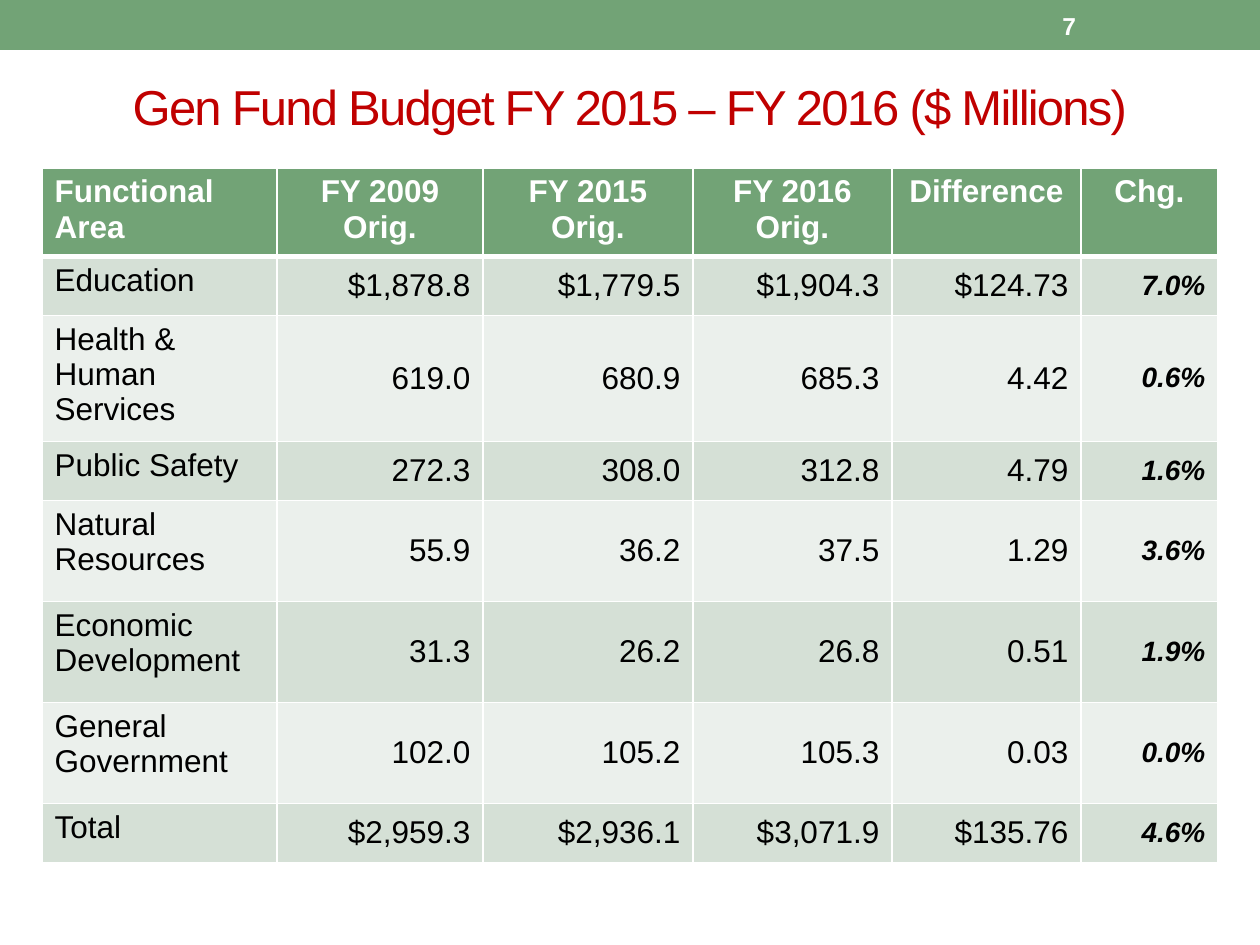
from lxml.etree import SubElement
from pptx import Presentation
from pptx.dml.color import RGBColor
from pptx.enum.shapes import MSO_SHAPE
from pptx.enum.text import MSO_ANCHOR as ANCHOR, PP_ALIGN as ALIGN
from pptx.oxml.ns import qn
from pptx.util import Emu, Pt

EMU_PER_PX = 914400 / 126
GREEN, PALE, PALER = "72A376", "D5E0D6", "EBF0EC"
WHITE, BLACK, RED = "FFFFFF", "000000", "C00000"

TITLE = "Gen Fund Budget FY 2015 – FY 2016 ($ Millions)"
COLUMN_WIDTHS = [235, 206, 210, 199, 189, 137]
SHORT_ROW, TALL_ROW = 59, 101
HEADER = ["Functional Area", "FY 2009 Orig.", "FY 2015 Orig.",
          "FY 2016 Orig.", "Difference", "Chg."]
BUDGET = [
    ["Education", "$1,878.8", "$1,779.5", "$1,904.3", "$124.73", "7.0%"],
    ["Health & Human Services", "619.0", "680.9", "685.3", "4.42", "0.6%"],
    ["Public Safety", "272.3", "308.0", "312.8", "4.79", "1.6%"],
    ["Natural Resources", "55.9", "36.2", "37.5", "1.29", "3.6%"],
    ["Economic Development", "31.3", "26.2", "26.8", "0.51", "1.9%"],
    ["General Government", "102.0", "105.2", "105.3", "0.03", "0.0%"],
    ["Total", "$2,959.3", "$2,936.1", "$3,071.9", "$135.76", "4.6%"],
]

BODY_FONT = {"name": "Arial", "size": Pt(18), "bold": False, "italic": False}
HEADER_FONT = {**BODY_FONT, "bold": True}
CHANGE_FONT = {**BODY_FONT, "size": Pt(16), "bold": True, "italic": True}
TITLE_FONT = {**BODY_FONT, "size": Pt(28)}
NUMBER_FONT = {**HEADER_FONT, "size": Pt(14)}


def px(length):
    return Emu(round(length * EMU_PER_PX))


def color(hex_string):
    return RGBColor.from_string(hex_string)


def paint(shape, hex_string):
    shape.fill.solid()
    shape.fill.fore_color.rgb = color(hex_string)


def write(frame, text, font, hex_string, align=ALIGN.LEFT):
    """Put one formatted run in a text frame and return the run."""
    paragraph = frame.paragraphs[0]
    paragraph.alignment = align
    run = paragraph.add_run()
    run.text = text
    for name, value in font.items():
        setattr(run.font, name, value)
    run.font.color.rgb = color(hex_string)
    return run


def add_borders(cell, top, bottom):
    """Draw white borders; top and bottom are line widths in points."""
    properties = cell._tc.get_or_add_tcPr()
    widths = {"a:lnL": 1, "a:lnR": 1, "a:lnT": top, "a:lnB": bottom}
    for tag, width in widths.items():
        line = SubElement(properties, qn(tag), w=str(Pt(width)))
        fill = SubElement(line, qn("a:solidFill"))
        SubElement(fill, qn("a:srgbClr"), val=WHITE)


def add_top_bar(slide, left, top, width, height):
    bar = slide.shapes.add_shape(
        MSO_SHAPE.RECTANGLE, px(left), px(top), px(width), px(height))
    bar.shadow.inherit = False
    paint(bar, GREEN)
    bar.line.fill.background()

    number = slide.shapes.add_textbox(
        px(left + 1050), px(top + 3), px(147), px(height - 5))
    frame = number.text_frame
    frame.word_wrap = True
    frame.vertical_anchor = ANCHOR.MIDDLE
    write(frame, "7", NUMBER_FONT, WHITE)


def place_title(slide, left, top, width, height):
    title = slide.shapes.title
    box = {"left": left, "top": top, "width": width, "height": height}
    for name, value in box.items():
        setattr(title, name, px(value))
    title.text_frame.vertical_anchor = ANCHOR.MIDDLE
    run = write(title.text_frame, TITLE, TITLE_FONT, RED, ALIGN.CENTER)
    run._r.get_or_add_rPr().set("spc", "-100")


def fill_header_cell(cell, text, column):
    add_borders(cell, 1, 3)
    paint(cell, GREEN)
    align = ALIGN.CENTER if column else ALIGN.LEFT
    write(cell.text_frame, text, HEADER_FONT, WHITE, align)


def fill_body_cell(cell, text, row, column):
    add_borders(cell, 3 if row == 1 else 1, 1)
    paint(cell, PALE if row % 2 else PALER)
    if column:
        cell.vertical_anchor = ANCHOR.MIDDLE
    font = CHANGE_FONT if column == len(HEADER) - 1 else BODY_FONT
    align = ALIGN.RIGHT if column else ALIGN.LEFT
    write(cell.text_frame, text, font, BLACK, align)


def add_budget_table(slide, left, top):
    heights = [SHORT_ROW] + [
        TALL_ROW if " " in area and area != "Public Safety" else SHORT_ROW
        for area, *_ in BUDGET]
    table = slide.shapes.add_table(
        len(heights), len(HEADER), px(left), px(top),
        px(sum(COLUMN_WIDTHS)), px(sum(heights))).table
    for column, width in zip(table.columns, COLUMN_WIDTHS):
        column.width = px(width)
    for row, height in zip(table.rows, heights):
        row.height = px(height)

    for column, text in enumerate(HEADER):
        fill_header_cell(table.cell(0, column), text, column)
    for row, values in enumerate(BUDGET, start=1):
        for column, text in enumerate(values):
            fill_body_cell(table.cell(row, column), text, row, column)


def main():
    presentation = Presentation()
    presentation.slide_width = px(1260)
    presentation.slide_height = px(945)
    slide = presentation.slides.add_slide(presentation.slide_layouts[5])
    add_top_bar(slide, 0, 0, 1260, 50)
    place_title(slide, 63, 53, 1134, 105)
    add_budget_table(slide, 42, 168)
    presentation.save("out.pptx")


if __name__ == "__main__":
    main()
